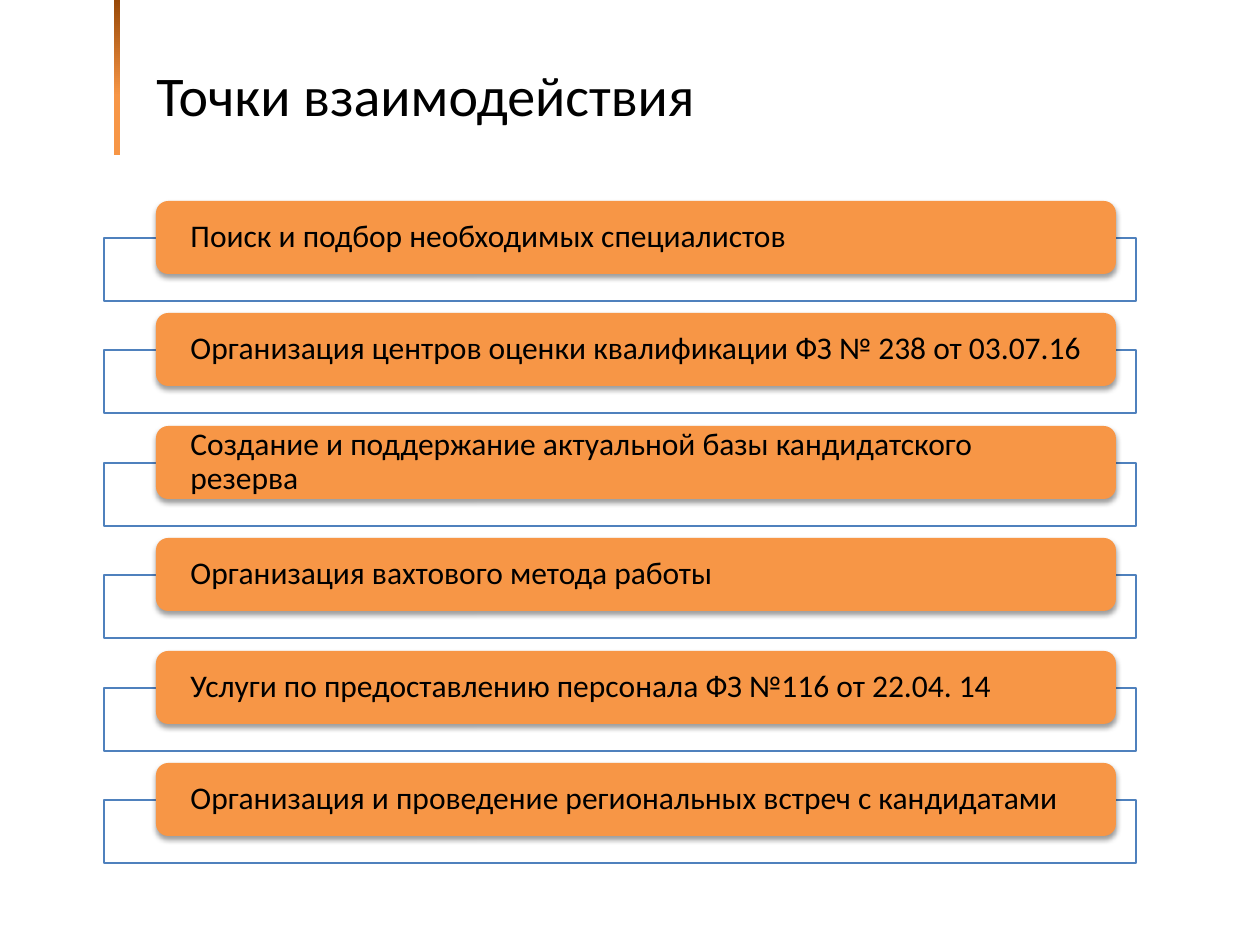
from dataclasses import dataclass

from lxml import etree
from pptx import Presentation
from pptx.dml.color import RGBColor
from pptx.enum.shapes import MSO_SHAPE
from pptx.enum.text import MSO_ANCHOR, MSO_AUTO_SIZE, PP_ALIGN
from pptx.oxml.ns import qn
from pptx.util import Emu, Pt

RECT, ROUNDED = MSO_SHAPE.RECTANGLE, MSO_SHAPE.ROUNDED_RECTANGLE
MIDDLE, LEFT = MSO_ANCHOR.MIDDLE, PP_ALIGN.LEFT
FIT_SHAPE = MSO_AUTO_SIZE.SHAPE_TO_FIT_TEXT
PX_PER_INCH = 126


@dataclass(frozen=True)
class Theme:
    font: str = "Calibri"
    title_size: int = 32
    item_size: int = 18
    text: RGBColor = RGBColor(0x00, 0x00, 0x00)
    paper: RGBColor = RGBColor(0xFF, 0xFF, 0xFF)
    accent: RGBColor = RGBColor(0xF7, 0x96, 0x46)
    accent_dark: RGBColor = RGBColor(0x98, 0x48, 0x07)
    frame: RGBColor = RGBColor(0x4F, 0x81, 0xBD)


@dataclass(frozen=True)
class Area:
    left: int
    top: int
    width: int
    height: int

    def moved_down(self, distance: int) -> "Area":
        return Area(self.left, self.top + distance, self.width, self.height)

    def emu(self) -> tuple:
        return tuple(px(n) for n in (self.left, self.top, self.width, self.height))


THEME = Theme()
BAR = Area(114, 0, 6, 155)
TITLE = Area(144, 54, 873, 81)
FIRST_FRAME = Area(104, 238, 1032, 63)
FIRST_LABEL = Area(156, 201, 960, 73)
ROWS_SPAN = 562  # from the first row to the last
LABEL_INSET = 31
ITEMS = (
    "Поиск и подбор необходимых специалистов",
    "Организация центров оценки квалификации ФЗ № 238 от 03.07.16",
    "Создание и поддержание актуальной базы кандидатского резерва",
    "Организация вахтового метода работы",
    "Услуги по предоставлению персонала ФЗ №116 от 22.04. 14",
    "Организация и проведение региональных встреч с кандидатами",
)


def px(count: int) -> Emu:
    return Emu(round(count * 914400 / PX_PER_INCH))


def add_box(page, kind, area: Area):
    box = page.shapes.add_shape(kind, *area.emu())
    box.shadow.inherit = False
    box.line.fill.background()
    return box


def write(para, text: str, size: int) -> None:
    para.text = text
    para.alignment = LEFT
    para.font.name = THEME.font
    para.font.size = Pt(size)
    para.font.color.rgb = THEME.text


def add_soft_shadow(box) -> None:
    effects = box._element.spPr.find(qn("a:effectLst"))
    shadow = etree.SubElement(
        effects, qn("a:outerShdw"), blurRad=str(Pt(3.1)), dist=str(Pt(1.6)),
        dir="5400000", rotWithShape="0")
    color = etree.SubElement(shadow, qn("a:srgbClr"), val="000000")
    etree.SubElement(color, qn("a:alpha"), val="38000")


def add_bar(page) -> None:
    fill = add_box(page, RECT, BAR).fill
    fill.gradient()
    fill.gradient_angle = 270
    stops = ((0, THEME.accent_dark), (0.62, THEME.accent))
    for stop, (position, color) in zip(fill.gradient_stops, stops):
        stop.position = position
        stop.color.rgb = color


def add_title(page, text: str) -> None:
    frame = page.shapes.add_textbox(*TITLE.emu()).text_frame
    frame.word_wrap = True
    frame.auto_size = FIT_SHAPE
    write(frame.paragraphs[0], text, THEME.title_size)


def add_frame(page, area: Area) -> None:
    box = add_box(page, RECT, area)
    box.fill.solid()
    box.fill.fore_color.rgb = THEME.paper
    color = box._element.spPr.find(qn("a:solidFill"))[0]
    etree.SubElement(color, qn("a:alpha"), val="90000")
    box.line.color.rgb = THEME.frame
    box.line.width = Pt(0.75)


def add_label(page, area: Area, text: str) -> None:
    box = add_box(page, ROUNDED, area)
    box.fill.solid()
    box.fill.fore_color.rgb = THEME.accent
    add_soft_shadow(box)
    frame = box.text_frame
    frame.word_wrap = True
    frame.vertical_anchor = MIDDLE
    frame.margin_left = frame.margin_right = px(LABEL_INSET)
    frame.margin_top = frame.margin_bottom = 0
    para = frame.paragraphs[0]
    para.line_spacing = 0.9
    write(para, text, THEME.item_size)


def main() -> None:
    deck = Presentation()
    deck.slide_width, deck.slide_height = px(1260), px(945)
    page = deck.slides.add_slide(deck.slide_layouts[6])

    # Heading
    add_bar(page)
    add_title(page, "Точки взаимодействия")

    # Evenly spaced rows: an outlined frame behind a filled label
    for index, item in enumerate(ITEMS):
        offset = round(ROWS_SPAN * index / (len(ITEMS) - 1))
        add_frame(page, FIRST_FRAME.moved_down(offset))
        add_label(page, FIRST_LABEL.moved_down(offset), item)

    deck.save("out.pptx")


if __name__ == "__main__":
    main()
